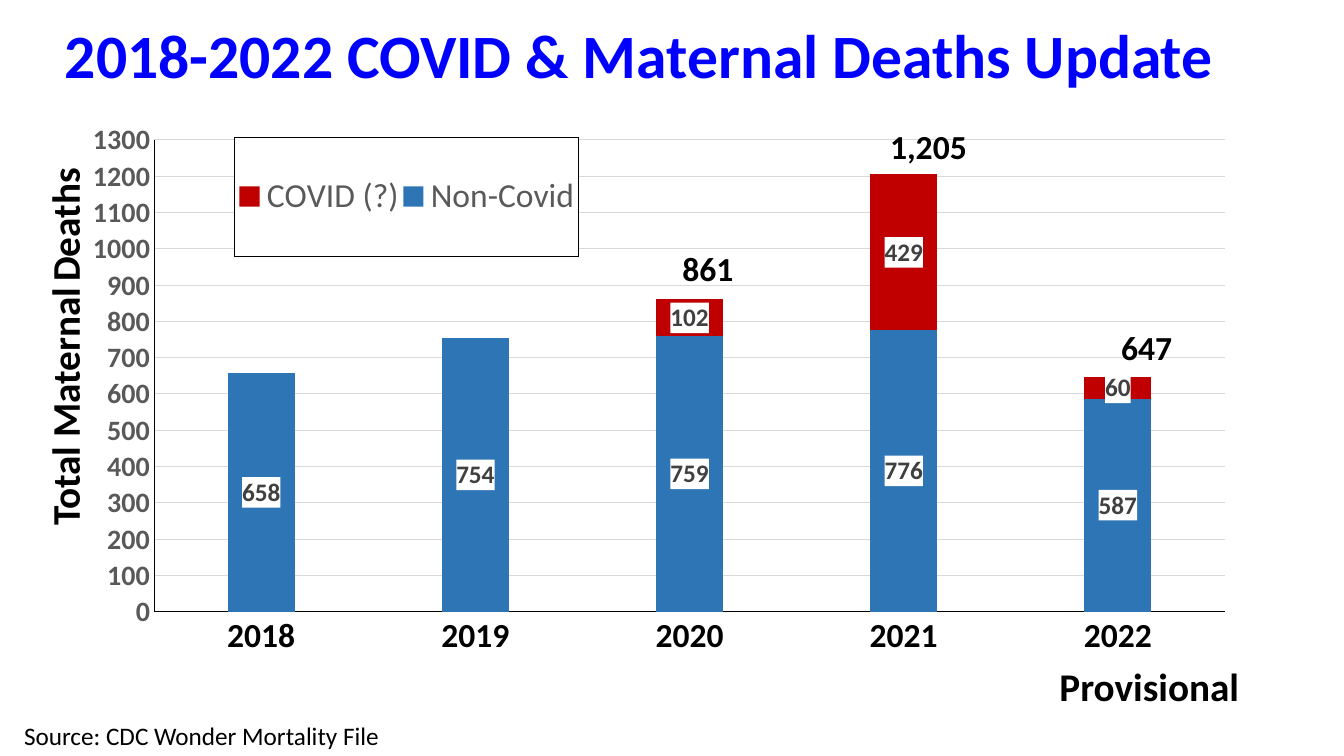
from dataclasses import dataclass
from lxml.etree import fromstring
from pptx import Presentation
from pptx.chart.data import CategoryChartData
from pptx.dml.color import RGBColor
from pptx.enum.chart import (XL_CHART_TYPE, XL_LABEL_POSITION, XL_LEGEND_POSITION,
                             XL_TICK_MARK)
from pptx.enum.text import MSO_ANCHOR, MSO_AUTO_SIZE, PP_ALIGN
from pptx.util import Inches, Pt

# Content
TITLE = "2018-2022 COVID & Maternal Deaths Update"
YEARS = ["2018", "2019", "2020", "2021", "2022"]
SERIES = [  # name, values, colour role
    ("Non-Covid", (658, 754, 759, 776, 587), "non_covid"),
    ("COVID (?)", (0, 0, 102, 429, 60), "covid"),
]
TEXTS = [  # runs with size role, box, bold, wrap, rotation
    ([("Total Maternal", "heading"), (" ", "axis"), ("Deaths", "heading")],
     (-1.51, 2.88, 4.3, 0.57), True, True, 270),
    ([("861", "label")], (6.67, 2.41, 0.71, 0.5), True, False, 0),
    ([("1,205", "label")], (8.73, 1.2, 0.97, 0.5), True, False, 0),
    ([("Source: CDC Wonder Mortality File", "small")],
     (0.14, 7.1, 4.13, 0.4), False, True, 0),
    ([("647", "label")], (11.02, 3.19, 0.71, 0.5), True, False, 0),
    ([("Provisional", "heading")], (10.41, 6.52, 2, 0.57), True, False, 0),
]
CHART_BOX = (0.92, 1.01, 11.5, 5.74)
PLOT_BOX = (1.51, 1.39, 10.64, 4.68)
LEGEND_BOX = (2.31, 1.36, 3.42, 1.18)
CHART_NS = "http://schemas.openxmlformats.org/drawingml/2006/chart"
DRAWING_NS = "http://schemas.openxmlformats.org/drawingml/2006/main"


@dataclass(frozen=True)
class Theme:
    font: str = "Calibri"
    title_color: str = "0000FF"
    text: str = "000000"
    muted: str = "595959"
    value: str = "404040"
    grid: str = "D9D9D9"
    white: str = "FFFFFF"
    non_covid: str = "2E75B6"
    covid: str = "C00000"
    title: int = 44
    heading: int = 28
    label: int = 24
    axis: int = 20
    small: int = 18


THEME = Theme()


def style_font(font, size, color, bold=False):
    font.name, font.size, font.bold = THEME.font, Pt(size), bold
    font.color.rgb = RGBColor.from_string(color)


def style_line(line, color):
    line.color.rgb = RGBColor.from_string(color)
    line.width = Pt(0.75)


def chart_xml(content):
    """Parse a chart element, declaring its namespaces on the first tag."""
    tag, rest = content.split(">", 1)
    return fromstring(f'{tag} xmlns:c="{CHART_NS}" xmlns:a="{DRAWING_NS}">{rest}')


def box_xml(outline):
    """Shape properties: white fill with the given outline content."""
    return chart_xml(f'<c:spPr><a:solidFill><a:srgbClr val="{THEME.white}"/></a:solidFill>'
                     f"<a:ln>{outline}</a:ln></c:spPr>")


def layout_xml(box, target=""):
    """Manual layout of a slide box, as fractions of the chart frame."""
    left, top, width, height = CHART_BOX
    fractions = {"x": (box[0] - left) / width, "y": (box[1] - top) / height,
                 "w": box[2] / width, "h": box[3] / height}
    modes = '<c:xMode val="edge"/><c:yMode val="edge"/>'
    sizes = "".join(f'<c:{key} val="{value:.4f}"/>' for key, value in fractions.items())
    return chart_xml(f"<c:layout><c:manualLayout>{target}{modes}{sizes}"
                     "</c:manualLayout></c:layout>")


def drop_layout(element):
    for layout in element.findall(f"{{{CHART_NS}}}layout"):
        element.remove(layout)


def add_labels(series, values):
    labels = series.data_labels
    labels.show_value = True
    labels.position = XL_LABEL_POSITION.CENTER
    style_font(labels.font, THEME.small, THEME.value, True)
    element = labels._element
    element.find(f"{{{CHART_NS}}}txPr").addprevious(box_xml("<a:noFill/>"))
    empty = [index for index, value in enumerate(values) if value == 0]
    for place, index in enumerate(empty):
        element.insert(place, chart_xml(
            f'<c:dLbl><c:idx val="{index}"/><c:delete val="1"/></c:dLbl>'))


def add_deaths_chart(slide):
    data = CategoryChartData()
    data.categories = YEARS
    for name, values, _ in SERIES:
        data.add_series(name, values)
    chart = slide.shapes.add_chart(XL_CHART_TYPE.COLUMN_STACKED,
                                   *map(Inches, CHART_BOX), data).chart
    chart.has_title = False
    style_font(chart.font, 10, THEME.text)

    # Columns
    plot = chart.plots[0]
    plot.gap_width, plot.overlap, plot.vary_by_categories = 219, 100, False
    for series, (_, values, role) in zip(plot.series, SERIES):
        series.format.fill.solid()
        series.format.fill.fore_color.rgb = RGBColor.from_string(getattr(THEME, role))
        add_labels(series, values)
    plot_area = plot._element.getparent()
    drop_layout(plot_area)
    plot_area.insert(0, layout_xml(PLOT_BOX, '<c:layoutTarget val="inner"/>'))

    # Axes
    for axis, size, color in ((chart.category_axis, THEME.label, THEME.text),
                              (chart.value_axis, THEME.axis, THEME.muted)):
        axis.major_tick_mark = axis.minor_tick_mark = XL_TICK_MARK.NONE
        style_font(axis.tick_labels.font, size, color, True)
        style_line(axis.format.line, THEME.text)
    value_axis = chart.value_axis
    value_axis.minimum_scale, value_axis.maximum_scale = 0, 1300
    value_axis.major_unit = 100
    value_axis.has_major_gridlines = True
    style_line(value_axis.major_gridlines.format.line, THEME.grid)

    # Legend
    chart.has_legend = True
    legend = chart.legend
    legend.position = XL_LEGEND_POSITION.RIGHT
    legend.include_in_layout = False
    style_font(legend.font, THEME.label, THEME.muted)
    element = legend._element
    drop_layout(element)
    element.find(f"{{{CHART_NS}}}legendPos").addnext(layout_xml(LEGEND_BOX))
    element.find(f"{{{CHART_NS}}}txPr").addprevious(box_xml(
        f'<a:solidFill><a:srgbClr val="{THEME.text}"/></a:solidFill>'))


def add_text(slide, runs, box, bold, wrap, rotation):
    shape = slide.shapes.add_textbox(*map(Inches, box))
    shape.rotation = rotation
    frame = shape.text_frame
    frame.word_wrap = wrap
    frame.auto_size = MSO_AUTO_SIZE.SHAPE_TO_FIT_TEXT
    paragraph = frame.paragraphs[0]
    for text, size in runs:
        run = paragraph.add_run()
        run.text = text
        style_font(run.font, getattr(THEME, size), THEME.text, bold)


def main():
    presentation = Presentation()
    presentation.slide_width, presentation.slide_height = Inches(13.33), Inches(7.5)
    slide = presentation.slides.add_slide(presentation.slide_layouts[5])

    # Title
    title = slide.shapes.title
    title.left, title.top, title.width, title.height = map(Inches, (0, 0.14, 12.69, 0.88))
    title.text_frame.text = TITLE
    title.text_frame.vertical_anchor = MSO_ANCHOR.MIDDLE
    paragraph = title.text_frame.paragraphs[0]
    paragraph.alignment, paragraph.line_spacing = PP_ALIGN.CENTER, 0.9
    style_font(paragraph.font, THEME.title, THEME.title_color, True)

    # Chart, then its totals and notes
    add_deaths_chart(slide)
    for text in TEXTS:
        add_text(slide, *text)
    presentation.save("out.pptx")


if __name__ == "__main__":
    main()
